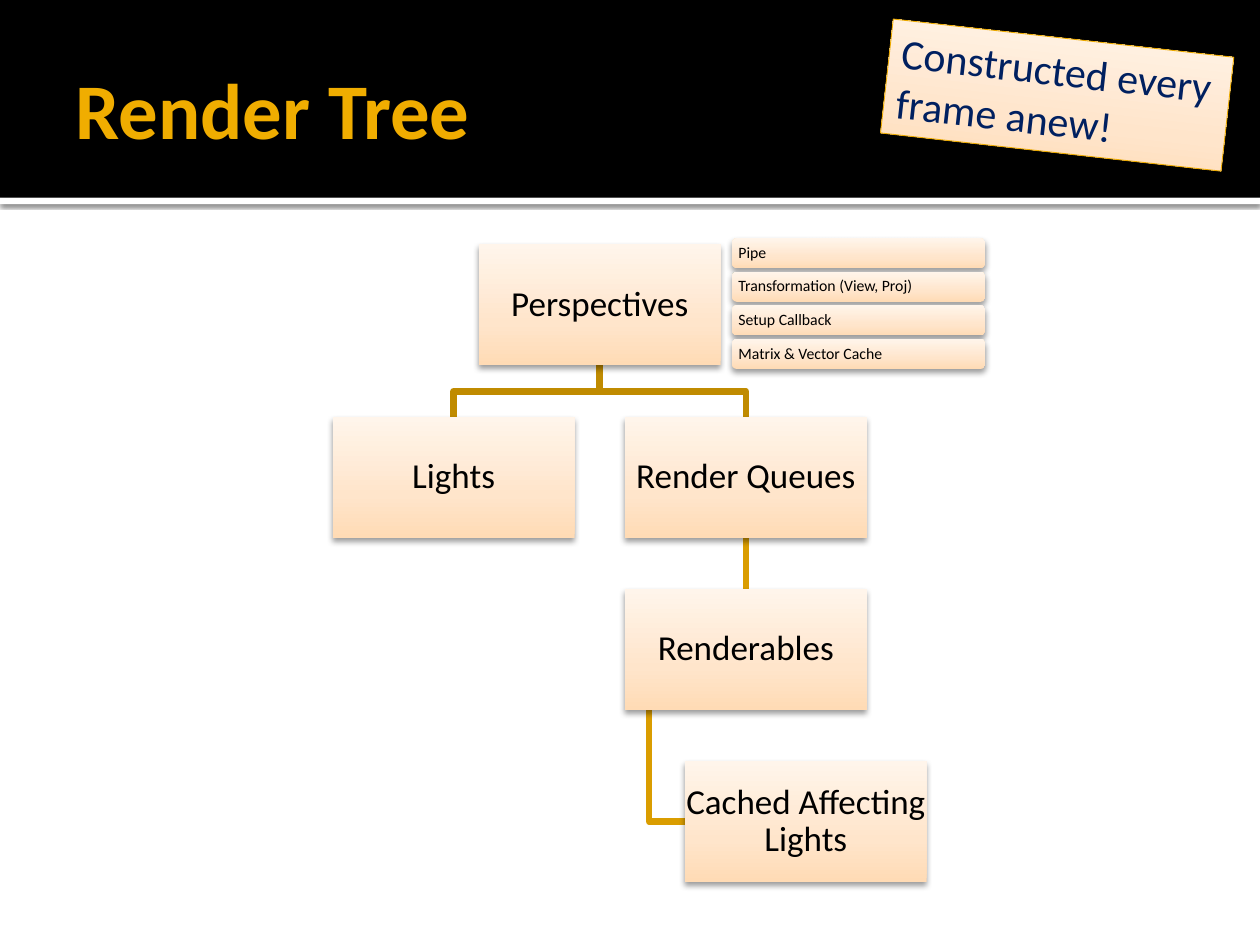
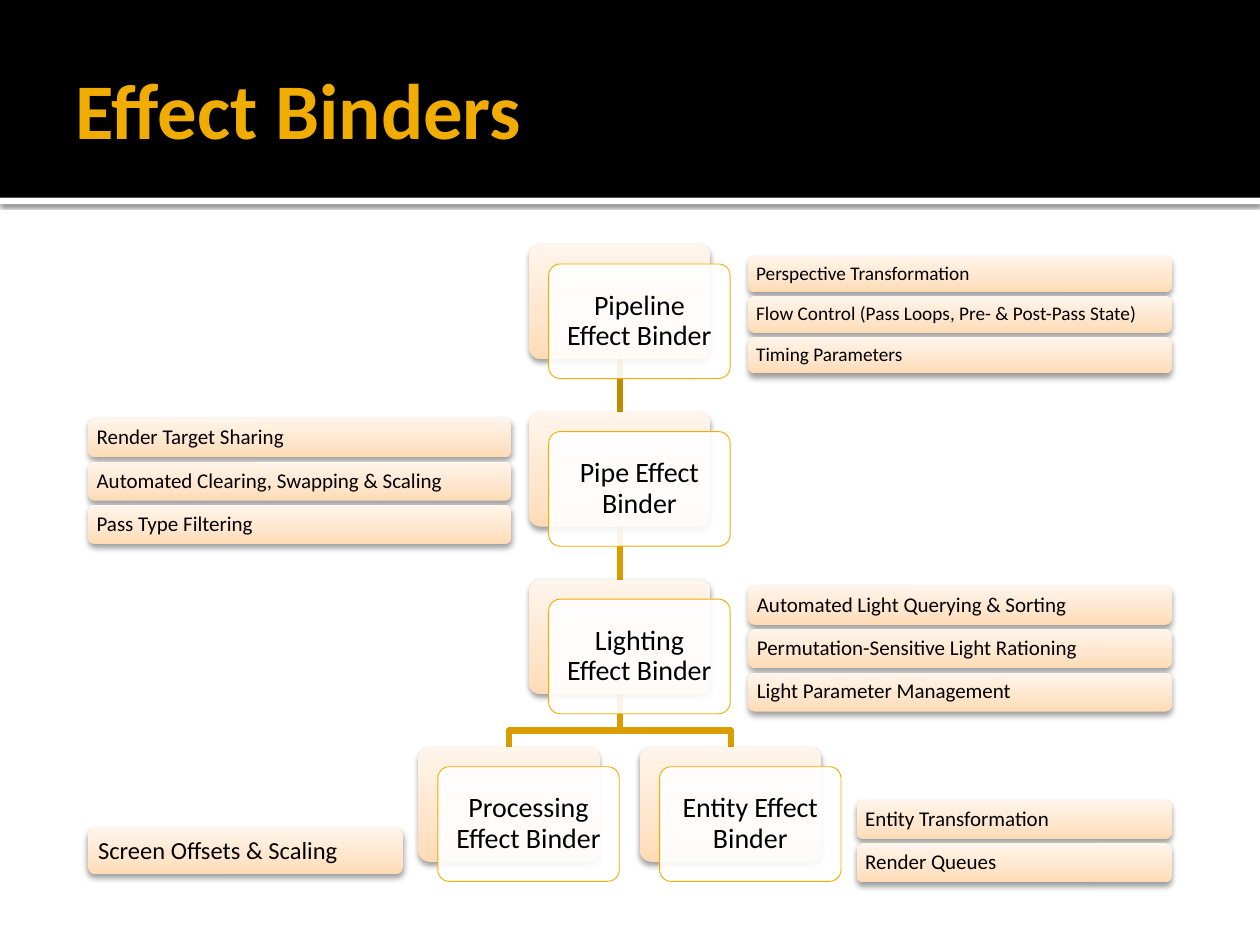
from dataclasses import dataclass

from pptx import Presentation
from pptx.dml.color import RGBColor
from pptx.enum.shapes import MSO_CONNECTOR, MSO_SHAPE
from pptx.enum.text import MSO_ANCHOR, MSO_AUTO_SIZE, PP_ALIGN
from pptx.oxml import parse_xml
from pptx.oxml.ns import nsdecls, qn
from pptx.util import Inches, Pt

RECTANGLE = MSO_SHAPE.RECTANGLE
ROUNDED = MSO_SHAPE.ROUNDED_RECTANGLE
STRAIGHT = MSO_CONNECTOR.STRAIGHT
MIDDLE, TOP = MSO_ANCHOR.MIDDLE, MSO_ANCHOR.TOP
LEFT, CENTER = PP_ALIGN.LEFT, PP_ALIGN.CENTER

BLACK = RGBColor(0x00, 0x00, 0x00)
WHITE = RGBColor(0xFF, 0xFF, 0xFF)
GOLD = RGBColor(0xF0, 0xAD, 0x00)
NOTE_EDGE = RGBColor(0xEB, 0xA9, 0x00)
NAVY = RGBColor(0x00, 0x20, 0x60)
UPPER_LINK = RGBColor(0xC0, 0x8B, 0x00)
LOWER_LINK = RGBColor(0xDA, 0x9D, 0x00)
PEACH_STOPS = (
    (0, RGBColor(0xFF, 0xDB, 0xB5)),
    (35, RGBColor(0xFF, 0xE5, 0xCB)),
    (100, RGBColor(0xFF, 0xF5, 0xEB)),
)

FONT = "Calibri"
SLIDE_WIDTH, SLIDE_HEIGHT = 10, 7.5
BAND_HEIGHT = 1.57
LINK_WIDTH = 3.78
TAG_PITCH = 1.11
PLATE_SHIFT = 0.155


@dataclass
class Tree:
    axis: float
    step: float
    top: float
    pitch: float
    width: float
    height: float

    def center(self, column):
        return self.axis + column * self.step

    def left(self, column):
        return self.center(column) - self.width / 2

    def row_top(self, row):
        return self.top + row * self.pitch

    def row_bottom(self, row):
        return self.row_top(row) + self.height


RENDER_TREE = Tree(4.76, 1.16, 1.94, 1.367, 1.92, 0.96)
BINDER_TREE = Tree(4.92, 0.88, 1.94, 1.33, 1.44, 0.91)


def add_block(page, kind, left, top, width, height):
    block = page.shapes.add_shape(
        kind, Inches(left), Inches(top), Inches(width), Inches(height))
    block.shadow.inherit = False
    block.line.fill.background()
    return block


def paint(block, color):
    block.fill.solid()
    block.fill.fore_color.rgb = color


def outline(block, color, width):
    block.line.color.rgb = color
    block.line.width = Pt(width)


def cast_shadow(block, alpha=38, blur=3.5, distance=2):
    effects = block.element.spPr.find(qn("a:effectLst"))
    effects.append(parse_xml(
        f'<a:outerShdw {nsdecls("a")} blurRad="{Pt(blur)}" dist="{Pt(distance)}" '
        f'dir="5400000" rotWithShape="0"><a:srgbClr val="{BLACK}">'
        f'<a:alpha val="{alpha * 1000}"/></a:srgbClr></a:outerShdw>'))


def add_peach_block(page, kind, left, top, width, height):
    block = add_block(page, kind, left, top, width, height)
    block.fill.background()
    stops = "".join(
        f'<a:gs pos="{share * 1000}"><a:srgbClr val="{color}"/></a:gs>'
        for share, color in PEACH_STOPS)
    gradient = parse_xml(
        f'<a:gradFill {nsdecls("a")} rotWithShape="1"><a:gsLst>{stops}</a:gsLst>'
        f'<a:lin ang="16200000" scaled="0"/></a:gradFill>')
    properties = block.element.spPr
    properties.replace(properties.find(qn("a:noFill")), gradient)
    cast_shadow(block)
    return block


def style_text(frame, size, color=BLACK, bold=False):
    for para in frame.paragraphs:
        for span in para.runs:
            span.font.name = FONT
            span.font.size = Pt(size)
            span.font.bold = bold
            span.font.color.rgb = color


def set_insets(frame, left, other):
    frame.margin_left = Inches(left)
    frame.margin_top = frame.margin_right = frame.margin_bottom = Inches(other)


def write(block, label, size, inset, align=CENTER):
    frame = block.text_frame
    frame.text = label
    frame.word_wrap = True
    frame.vertical_anchor = MIDDLE
    set_insets(frame, inset, inset)
    frame.paragraphs[0].alignment = align
    frame.paragraphs[0].line_spacing = 0.9
    style_text(frame, size)


def add_link(page, color, points):
    corners = [(Inches(x), Inches(y)) for x, y in points]
    if len(corners) == 2:
        link = page.shapes.add_connector(STRAIGHT, *corners[0], *corners[1])
        link.element.spPr.append(parse_xml(f'<a:effectLst {nsdecls("a")}/>'))
    else:
        builder = page.shapes.build_freeform(*corners[0])
        builder.add_line_segments(corners[1:], close=False)
        link = builder.convert_to_shape()
        link.shadow.inherit = False
        link.fill.background()
    outline(link, color, LINK_WIDTH)


def link_down(page, tree, color, row, column):
    x = tree.center(column)
    add_link(page, color, [(x, tree.row_bottom(row)), (x, tree.row_top(row + 1))])


def link_fork(page, tree, color, row, rise):
    end = tree.row_top(row + 1)
    for column in (1, -1):
        x = tree.center(column)
        add_link(page, color, [(tree.axis, tree.row_bottom(row)),
                               (tree.axis, end - rise), (x, end - rise), (x, end)])


def add_card(page, tree, label, column, row):
    card = add_peach_block(page, RECTANGLE, tree.left(column), tree.row_top(row),
                           tree.width, tree.height)
    write(card, label, 20, 0.01)


def add_double_card(page, tree, label, column, row):
    left, top = tree.left(column), tree.row_top(row)
    back = add_peach_block(page, ROUNDED, left, top, tree.width, tree.height)
    plate = add_block(page, ROUNDED, left + PLATE_SHIFT, top + PLATE_SHIFT,
                      tree.width, tree.height)
    back.adjustments[0] = plate.adjustments[0] = 0.1
    paint(plate, WHITE)
    tint = plate.element.spPr.find(qn("a:solidFill"))[0]
    tint.append(parse_xml(f'<a:alpha {nsdecls("a")} val="90000"/>'))
    outline(plate, GOLD, 0.5)
    write(plate, label, 16, 0.07)


def add_tags(page, left, top, width, height, size, labels):
    for row, label in enumerate(labels):
        tag = add_peach_block(page, ROUNDED, left, top + row * height * TAG_PITCH,
                              width, height)
        write(tag, label, size, size / 230, LEFT)


def add_note(page, label):
    note = add_peach_block(page, RECTANGLE, 7.03, 0.3, 2.72, 0.91)
    outline(note, NOTE_EDGE, 0.5)
    note.rotation = 6.4
    frame = note.text_frame
    frame.text = label
    frame.word_wrap = True
    frame.auto_size = MSO_AUTO_SIZE.SHAPE_TO_FIT_TEXT
    frame.vertical_anchor = TOP
    frame.paragraphs[0].alignment = LEFT
    style_text(frame, 24, NAVY)


def add_bands(page, layout):
    stripe = add_block(page, RECTANGLE, 0, BAND_HEIGHT, SLIDE_WIDTH, 0.05)
    paint(stripe, WHITE)
    cast_shadow(stripe, 60, 2.5, 0.8)
    band = add_block(page, RECTANGLE, 0, 0, SLIDE_WIDTH, BAND_HEIGHT)
    paint(band, BLACK)
    for position, shape in enumerate((stripe, band), start=2):
        layout.shapes.element.insert(position, shape.element)


def add_page(deck, layout, heading):
    page = deck.slides.add_slide(layout)
    title = page.shapes.title
    title.left, title.top = Inches(0.5), Inches(0.17)
    title.width, title.height = Inches(9), Inches(1.37)
    frame = title.text_frame
    frame.text = heading
    frame.vertical_anchor = MIDDLE
    set_insets(frame, 0.1, 0.05)
    frame.paragraphs[0].alignment = LEFT
    style_text(frame, 45, GOLD, bold=True)
    return page


def fill_render_tree(page):
    tree = RENDER_TREE
    nested = 1.41
    nested_left = tree.left(nested)
    elbow_x = tree.left(1) + tree.width / 10
    elbow_y = tree.row_top(3) + tree.height / 2
    add_link(page, LOWER_LINK, [(elbow_x, tree.row_bottom(2)),
                                (elbow_x, elbow_y), (nested_left, elbow_y)])
    link_down(page, tree, LOWER_LINK, 1, 1)
    link_fork(page, tree, UPPER_LINK, 0, 0.2)
    for label, column, row in (
            ("Perspectives", 0, 0), ("Lights", -1, 1), ("Render Queues", 1, 1),
            ("Renderables", 1, 2), ("Cached Affecting Lights", nested, 3)):
        add_card(page, tree, label, column, row)
    add_tags(page, 5.81, 1.89, 2.01, 0.24, 9,
             ("Pipe", "Transformation (View, Proj)", "Setup Callback",
              "Matrix & Vector Cache"))
    add_note(page, "Constructed every frame anew!")


def fill_effect_binders(page):
    tree = BINDER_TREE
    link_fork(page, tree, LOWER_LINK, 2, 0.13)
    link_down(page, tree, LOWER_LINK, 1, 0)
    link_down(page, tree, UPPER_LINK, 0, 0)
    for label, column, row in (
            ("Pipeline Effect Binder", 0, 0), ("Pipe Effect Binder", 0, 1),
            ("Lighting Effect Binder", 0, 2), ("Processing Effect Binder", -1, 3),
            ("Entity Effect Binder", 1, 3)):
        add_double_card(page, tree, label, column, row)
    wide, narrow = 3.36, 2.5
    near_edge, far_edge = 0.7, 9.3
    add_tags(page, far_edge - wide, 2.03, wide, 0.29, 11,
             ("Perspective Transformation",
              "Flow Control (Pass Loops, Pre- & Post-Pass State)",
              "Timing Parameters"))
    add_tags(page, near_edge, 3.32, wide, 0.31, 12,
             ("Render Target Sharing", "Automated Clearing, Swapping & Scaling",
              "Pass Type Filtering"))
    add_tags(page, far_edge - wide, 4.65, wide, 0.31, 12,
             ("Automated Light Querying & Sorting",
              "Permutation-Sensitive Light Rationing",
              "Light Parameter Management"))
    add_tags(page, far_edge - narrow, 6.35, narrow, 0.31, 12,
             ("Entity Transformation", "Render Queues"))
    add_tags(page, near_edge, 6.57, narrow, 0.37, 14, ("Screen Offsets & Scaling",))


def main():
    deck = Presentation()
    deck.slide_width, deck.slide_height = Inches(SLIDE_WIDTH), Inches(SLIDE_HEIGHT)
    layout = deck.slide_layouts.get_by_name("Title Only")
    render_page = add_page(deck, layout, "Render Tree")
    add_bands(render_page, layout)
    fill_render_tree(render_page)
    fill_effect_binders(add_page(deck, layout, "Effect Binders"))
    deck.save("out.pptx")


if __name__ == "__main__":
    main()
